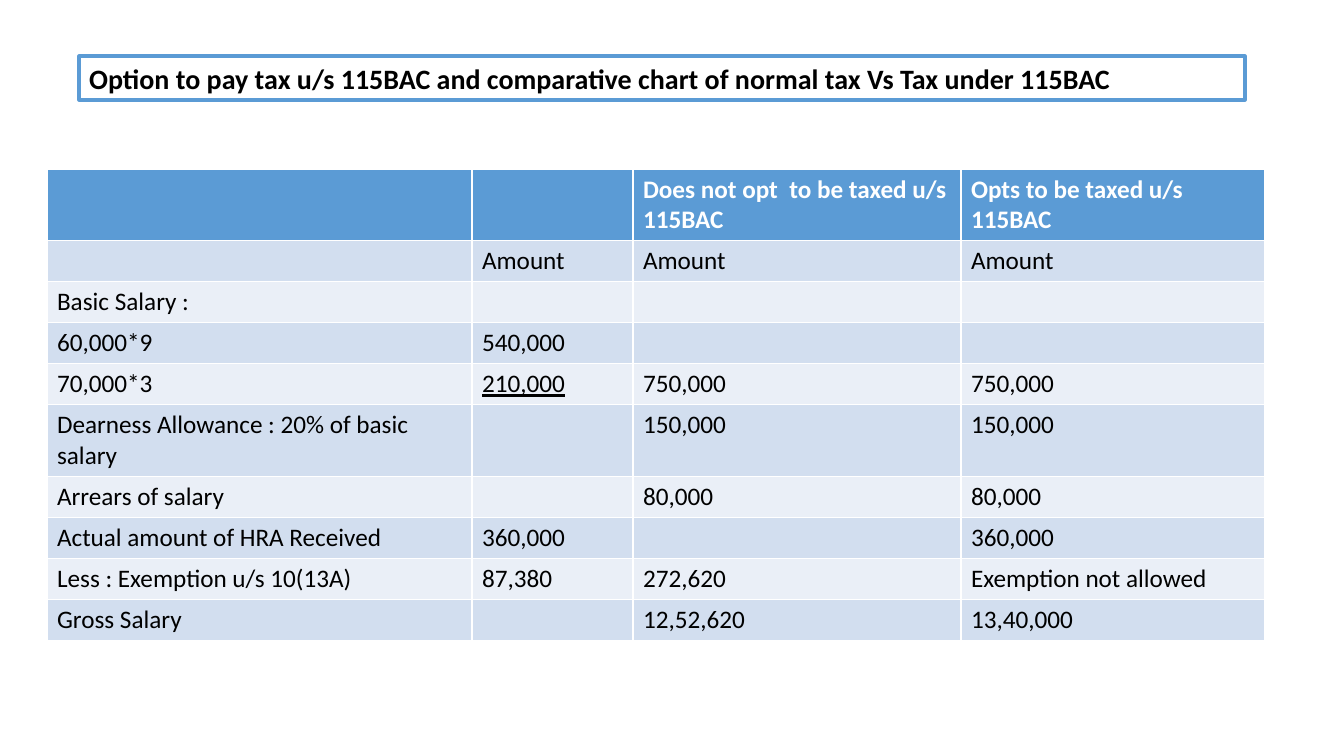
import dataclasses

import pptx
import pptx.dml.color
import pptx.enum.text
import pptx.util


def rgb(code):
    return pptx.dml.color.RGBColor.from_string(code)


@dataclasses.dataclass(frozen=True)
class Theme:
    font: str = "Calibri"
    head_size: int = 20
    cell_size: int = 18
    white: str = "FFFFFF"
    black: str = "000000"
    blue: str = "5B9BD5"
    bands: tuple = ("D2DEEF", "EAEFF7")


THEME = Theme()
SCALE = 914400 / 100.8

COLS = (425, 161, 328, 304)
ROW = 41
ROWS = (
    ("", "", "Does not opt  to be taxed u/s 115BAC", "Opts to be taxed u/s 115BAC"),
    ("", "Amount", "Amount", "Amount"),
    ("Basic Salary :", "", "", ""),
    ("60,000*9", "540,000", "", ""),
    ("70,000*3", "210,000", "750,000", "750,000"),
    ("Dearness Allowance : 20% of basic salary", "", "150,000", "150,000"),
    ("Arrears of salary", "", "80,000", "80,000"),
    ("Actual amount of HRA Received", "360,000", "", "360,000"),
    ("Less : Exemption u/s 10(13A)", "87,380", "272,620", "Exemption not allowed"),
    ("Gross Salary", "", "12,52,620", "13,40,000"),
)
SUBTOTAL = (4, 1)


def px(count):
    return pptx.util.Emu(round(count * SCALE))


def style(para, size, color, bold):
    font = para.font
    font.name = THEME.font
    font.size = pptx.util.Pt(size)
    font.bold = bold
    font.color.rgb = rgb(color)


def paint(item, color):
    item.fill.solid()
    item.fill.fore_color.rgb = rgb(color)


def add_title(slide, box, text):
    title = slide.shapes.title
    title.left, title.top, title.width, title.height = map(px, box)
    paint(title, THEME.white)
    title.line.color.rgb = rgb(THEME.blue)
    title.line.width = pptx.util.Pt(2.25)
    frame = title.text_frame
    frame.text = text
    frame.word_wrap = True
    frame.auto_size = pptx.enum.text.MSO_AUTO_SIZE.NONE
    frame.vertical_anchor = pptx.enum.text.MSO_ANCHOR.MIDDLE
    para = frame.paragraphs[0]
    para.alignment = pptx.enum.text.PP_ALIGN.LEFT
    style(para, THEME.head_size, THEME.black, True)


def add_grid(slide, box):
    """Place the tax table; white rules come from the default table style."""
    grid = slide.shapes.add_table(len(ROWS), len(COLS), *map(px, box)).table
    for col, width in zip(grid.columns, COLS):
        col.width = px(width)
    for r, texts in enumerate(ROWS):
        grid.rows[r].height = px(ROW)
        head = r == 0
        fill = THEME.blue if head else THEME.bands[(r - 1) % 2]
        color = THEME.white if head else THEME.black
        for c, text in enumerate(texts):
            cell = grid.cell(r, c)
            paint(cell, fill)
            cell.text = text
            style(cell.text_frame.paragraphs[0], THEME.cell_size, color, head)
    grid.cell(*SUBTOTAL).text_frame.paragraphs[0].font.underline = True


def main():
    deck = pptx.Presentation()
    deck.slide_width, deck.slide_height = px(1344), px(756)
    slide = deck.slides.add_slide(deck.slide_layouts.get_by_name("Title Only"))
    add_title(
        slide,
        (79, 56, 1166, 44),
        "Option to pay tax u/s 115BAC and comparative chart of normal tax Vs Tax under 115BAC",
    )
    add_grid(slide, (47, 169, sum(COLS), ROW * len(ROWS)))
    deck.save("out.pptx")


if __name__ == "__main__":
    main()
